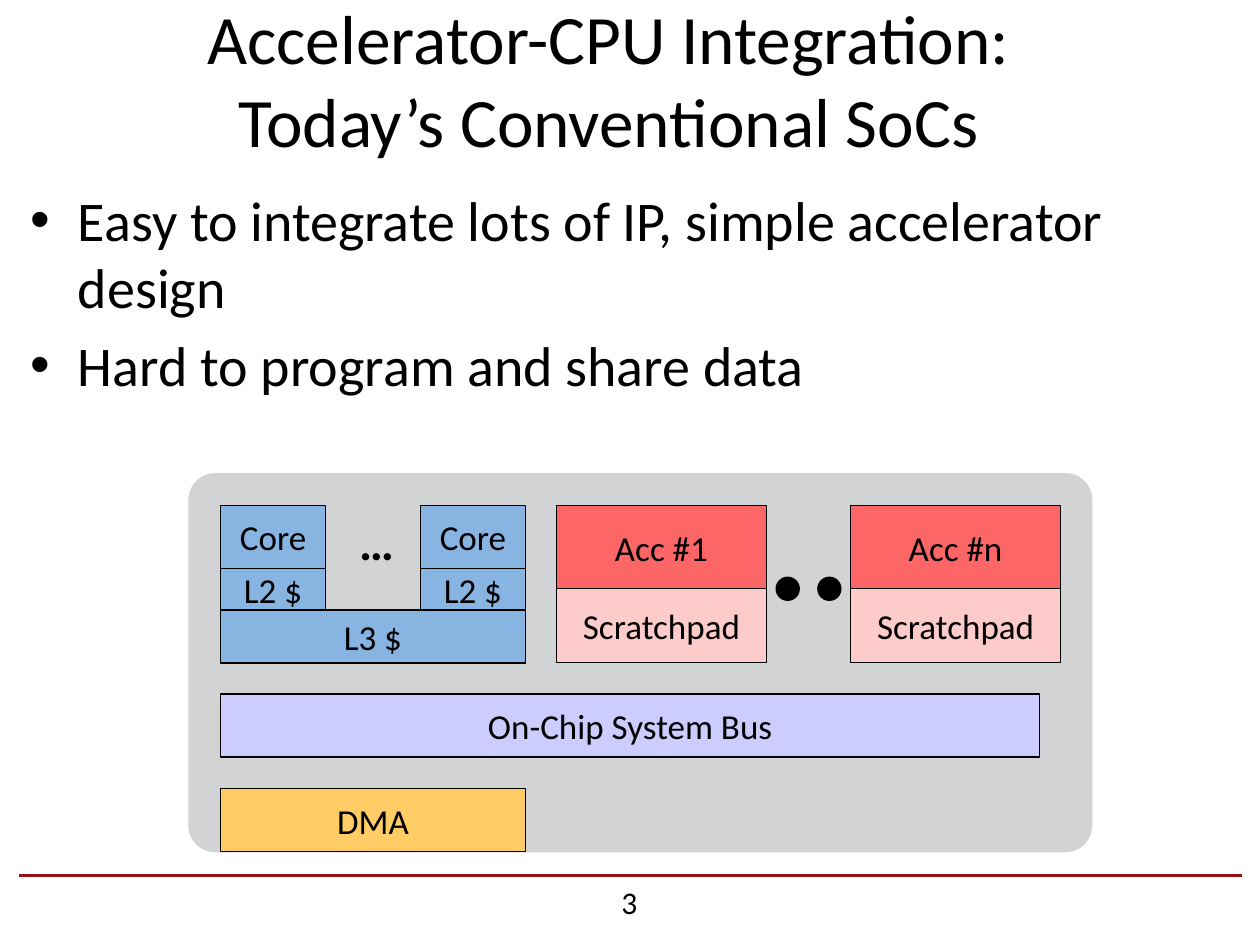
from lxml.etree import SubElement
from pptx import Presentation
from pptx.dml.color import RGBColor
from pptx.enum.shapes import MSO_CONNECTOR, MSO_SHAPE
from pptx.enum.text import MSO_ANCHOR, MSO_AUTO_SIZE, PP_ALIGN
from pptx.oxml.ns import qn
from pptx.util import Cm, Pt

COLORS = {
    "text": "000000", "rule": "971217", "chip": "D1D3D4", "cpu": "88B4E1",
    "dma": "FFCC66", "bus": "CDCCFF", "acc": "FC6666", "pad": "FECBCB",
}
LEFT, TOP = 4.45, 10.19
CORE_W, CORE_H, L2_H, L3_H = 2.11, 1.27, 0.84, 1.07
CPU_W, ACC_W, ACC_H, PAD_H = 6.14, 4.23, 1.68, 1.48
BUS_W, BAR_H, GAP = 16.51, 1.27, 0.64


def rgb(name):
    """Look up a named colour."""
    return RGBColor.from_string(COLORS[name])


def set_text(tf, lines, size, align=PP_ALIGN.CENTER, bold=False, **frame):
    """Fill a text frame with formatted paragraphs."""
    frame = {"word_wrap": True, "auto_size": MSO_AUTO_SIZE.NONE, **frame}
    for key, value in frame.items():
        setattr(tf, key, value)
    tf.text = "\n".join(lines)
    for p in tf.paragraphs:
        p.alignment = align
        for key, value in {"name": "Calibri", "size": Pt(size), "bold": bold}.items():
            setattr(p.font, key, value)
        p.font.color.rgb = rgb("text")


def add_text(shapes, box, lines, size, **fmt):
    """Add a text box."""
    sp = shapes.add_textbox(*map(Cm, box))
    set_text(sp.text_frame, lines, size, **fmt)
    return sp


def add_title(slide, box, text):
    """Place and format the title placeholder."""
    sp = slide.shapes.title
    for key, value in zip(("left", "top", "width", "height"), box):
        setattr(sp, key, Cm(value))
    set_text(sp.text_frame, [text], 39.6, vertical_anchor=MSO_ANCHOR.MIDDLE)


def add_bullets(shapes, box, lines):
    """Add a bulleted list."""
    sp = shapes.add_textbox(*map(Cm, box))
    tf = sp.text_frame
    tf.text = "\n".join(lines)
    set_text(tf, lines, 32, align=PP_ALIGN.LEFT)
    for i, p in enumerate(tf.paragraphs):
        p.space_before = Pt(6.4 if i else 0)
        pPr = p._p.get_or_add_pPr()
        pPr.set("marL", str(Cm(0.96)))
        pPr.set("indent", str(-Cm(0.96)))
        font, bullet = (pPr.makeelement(qn("a:buFont"), typeface="Arial"),
                        pPr.makeelement(qn("a:buChar"), char="•"))
        pPr.find(qn("a:defRPr")).addprevious(font)
        font.addnext(bullet)


def add_shape(shapes, kind, box, fill, line="text", width=0.75):
    """Add a filled and outlined preset shape."""
    sp = shapes.add_shape(kind, *map(Cm, box))
    sp.shadow.inherit = False
    sp.fill.solid()
    sp.fill.fore_color.rgb = rgb(fill)
    sp.line.color.rgb = rgb(line)
    sp.line.width = Pt(width)
    return sp


def add_block(shapes, box, text, fill):
    """Add a labelled rectangle."""
    sp = add_shape(shapes, MSO_SHAPE.RECTANGLE, box, fill)
    margins = dict.fromkeys(
        ("margin_left", "margin_top", "margin_right", "margin_bottom"), 0)
    set_text(sp.text_frame, [text], 20, vertical_anchor=MSO_ANCHOR.MIDDLE, **margins)


def add_stack(shapes, x, width, layers):
    """Stack labelled rectangles downwards from the top row."""
    y = TOP
    for text, height, fill in layers:
        add_block(shapes, (x, y, width, height), text, fill)
        y += height


def add_rule(shapes, x1, x2, y):
    """Add the footer rule."""
    line = shapes.add_connector(
        MSO_CONNECTOR.STRAIGHT, Cm(x1), Cm(y), Cm(x2), Cm(y))
    line.line.color.rgb = rgb("rule")
    line.line.width = Pt(2)
    SubElement(line._element.spPr, qn("a:effectLst"))


def add_chip(shapes):
    """Draw the SoC block diagram as one group."""
    chip = shapes.add_group_shape().shapes
    body = add_shape(chip, MSO_SHAPE.ROUNDED_RECTANGLE,
                     (3.81, 9.55, 18.2, 7.62), "chip", "chip")
    body.adjustments[0] = 0.07
    for x in (LEFT, LEFT + CPU_W - CORE_W):
        add_stack(chip, x, CORE_W, [("Core", CORE_H, "cpu"), ("L2 $", L2_H, "cpu")])
    add_text(chip, (6.99, TOP, 1.06, 1.45), ["…"], 28, align=PP_ALIGN.LEFT, bold=True)
    add_block(chip, (LEFT, TOP + CORE_H + L2_H, CPU_W, L3_H), "L3 $", "cpu")
    for x, name in ((11.22, "Acc #1"), (17.15, "Acc #n")):
        add_stack(chip, x, ACC_W, [(name, ACC_H, "acc"), ("Scratchpad", PAD_H, "pad")])
    for x in (15.67, 16.51):
        add_shape(chip, MSO_SHAPE.OVAL, (x, 11.66, 0.42, 0.42), "text", width=2)
    bus_y = TOP + ACC_H + PAD_H + GAP
    add_block(chip, (LEFT, bus_y, BUS_W, BAR_H), "On-Chip System Bus", "bus")
    add_block(chip, (LEFT, bus_y + BAR_H + GAP, CPU_W, BAR_H), "DMA", "dma")


def main():
    """Build the slide and save it."""
    prs = Presentation()
    prs.slide_width, prs.slide_height = Cm(25.4), Cm(19.05)
    slide = prs.slides.add_slide(prs.slide_layouts[5])
    shapes = slide.shapes
    add_rule(shapes, 0.38, 25.04, 17.65)
    add_title(slide, (0.84, 0.2, 22.86, 2.74),
              "Accelerator-CPU Integration:\vToday’s Conventional SoCs")
    add_text(shapes, (9.73, 17.68, 5.92, 1.02), ["3"], 18)
    add_bullets(shapes, (0.36, 3.61, 24.56, 13.41), [
        "Easy to integrate lots of IP, simple accelerator design",
        "Hard to program and share data",
    ])
    add_chip(shapes)
    prs.save("out.pptx")


if __name__ == "__main__":
    main()
